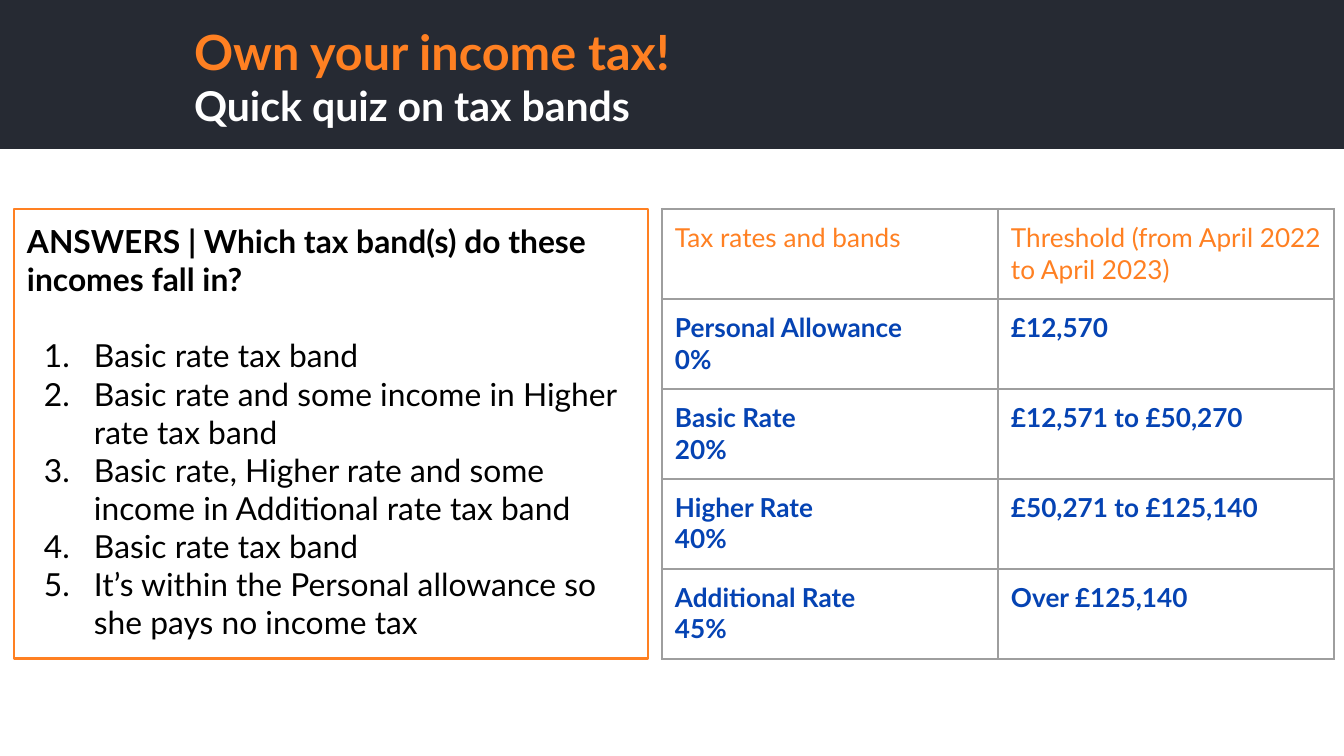
from lxml.etree import SubElement
from pptx import Presentation
from pptx.dml.color import RGBColor
from pptx.enum.shapes import MSO_SHAPE
from pptx.enum.text import MSO_ANCHOR, MSO_AUTO_SIZE, PP_ALIGN
from pptx.oxml import parse_xml
from pptx.oxml.ns import nsdecls, qn
from pptx.util import Pt

DARK = RGBColor(0x26, 0x2A, 0x33)
ORANGE = RGBColor(0xFF, 0x80, 0x22)
BLUE = RGBColor(0x05, 0x43, 0xB3)
GREY = RGBColor(0x9E, 0x9E, 0x9E)
BLACK = RGBColor(0, 0, 0)
WHITE = RGBColor(0xFF, 0xFF, 0xFF)
FONT = "Lato"
PAD = 13

TITLE = [("Own your income tax!", 26, ORANGE),
         ("Quick quiz on tax bands", 22, WHITE)]
ASK = "ANSWERS | Which tax band(s) do these incomes fall in?"
REPLIES = [
    "Basic rate tax band",
    "Basic rate and some income in Higher rate tax band",
    "Basic rate, Higher rate and some income in Additional rate tax band",
    "Basic rate tax band",
    "It’s within the Personal allowance so she pays no income tax",
]
RATES = [
    ("Tax rates and bands", "Threshold (from April 2022 to April 2023)"),
    ("Personal Allowance\n0%", "£12,570"),
    ("Basic Rate\n20%", "£12,571 to £50,270"),
    ("Higher Rate\n40%", "£50,271 to £125,140"),
    ("Additional Rate\n45%", "Over £125,140"),
]


def px(size):
    return round(size * 9144000 / 1344)


def style(para, size, color, bold):
    para.alignment = PP_ALIGN.LEFT
    for run in para.runs:
        run.font.name = FONT
        run.font.size = Pt(size)
        run.font.bold = bold
        run.font.color.rgb = color


def inset(item):
    item.margin_left = item.margin_right = px(PAD)
    item.margin_top = item.margin_bottom = px(PAD)


def add_box(slide, left, top, width, height):
    box = slide.shapes.add_shape(
        MSO_SHAPE.RECTANGLE, px(left), px(top), px(width), px(height))
    box.shadow.inherit = False
    return box


def add_head(slide, left, top, width, height):
    band = add_box(slide, left, top, width, height)
    band.fill.solid()
    band.fill.fore_color.rgb = DARK
    band.line.fill.background()
    slide.shapes._spTree.insert(2, band._element)

    title = slide.shapes.title
    title.left, title.top = px(left + 181), px(top + 38)
    title.width, title.height = px(927), px(75)
    frame = title.text_frame
    frame.text = "\n".join(text for text, _, _ in TITLE)
    frame.word_wrap = True
    frame.auto_size = MSO_AUTO_SIZE.NONE
    frame.vertical_anchor = MSO_ANCHOR.MIDDLE
    inset(frame)
    for para, (_, size, color) in zip(frame.paragraphs, TITLE):
        style(para, size, color, True)


def add_number(para):
    props = para._p.get_or_add_pPr()
    props.set("marL", str(px(67)))
    props.set("indent", str(-px(50)))
    SubElement(props, qn("a:buFont"), typeface=FONT)
    SubElement(props, qn("a:buAutoNum"), type="arabicPeriod")


def add_quiz(slide, left, top, width, height):
    box = add_box(slide, left, top, width, height)
    box.fill.background()
    box.line.color.rgb = ORANGE
    box.line.width = Pt(1.5)
    frame = box.text_frame
    frame.text = "\n".join([ASK] + REPLIES)
    frame.word_wrap = True
    frame.vertical_anchor = MSO_ANCHOR.TOP
    inset(frame)
    ask, *items = frame.paragraphs
    style(ask, 17, BLACK, True)
    items[0].space_before = Pt(20.4)
    for para in items:
        add_number(para)
        style(para, 17, BLACK, False)


def add_edge(cell):
    props = cell._tc.get_or_add_tcPr()
    for spot, side in enumerate(("lnL", "lnR", "lnT", "lnB")):
        props.insert(spot, parse_xml(
            f'<a:{side} {nsdecls("a")} w="{Pt(1.5)}"><a:solidFill>'
            f'<a:srgbClr val="{GREY}"/></a:solidFill></a:{side}>'))


def add_rates(slide, left, top, width, height):
    table = slide.shapes.add_table(
        len(RATES), 2, px(left), px(top), px(width), px(height)).table
    table.horz_banding = False
    for col in table.columns:
        col.width = px(width // 2)
    step = height // len(RATES)
    for row in table.rows:
        row.height = px(step)
    for num, texts in enumerate(RATES):
        for col, text in enumerate(texts):
            cell = table.cell(num, col)
            cell.text = text
            cell.fill.solid()
            cell.fill.fore_color.rgb = WHITE
            cell.vertical_anchor = MSO_ANCHOR.TOP
            inset(cell)
            add_edge(cell)
            for para in cell.text_frame.paragraphs:
                style(para, 14, BLUE if num else ORANGE, num > 0)


def main():
    deck = Presentation()
    deck.slide_width, deck.slide_height = px(1344), px(756)
    slide = deck.slides.add_slide(deck.slide_layouts[5])
    add_head(slide, 0, 0, 1344, 149)
    add_rates(slide, 662, 209, 672, 452)
    add_quiz(slide, 14, 209, 634, 450)
    deck.save("out.pptx")


if __name__ == "__main__":
    main()
